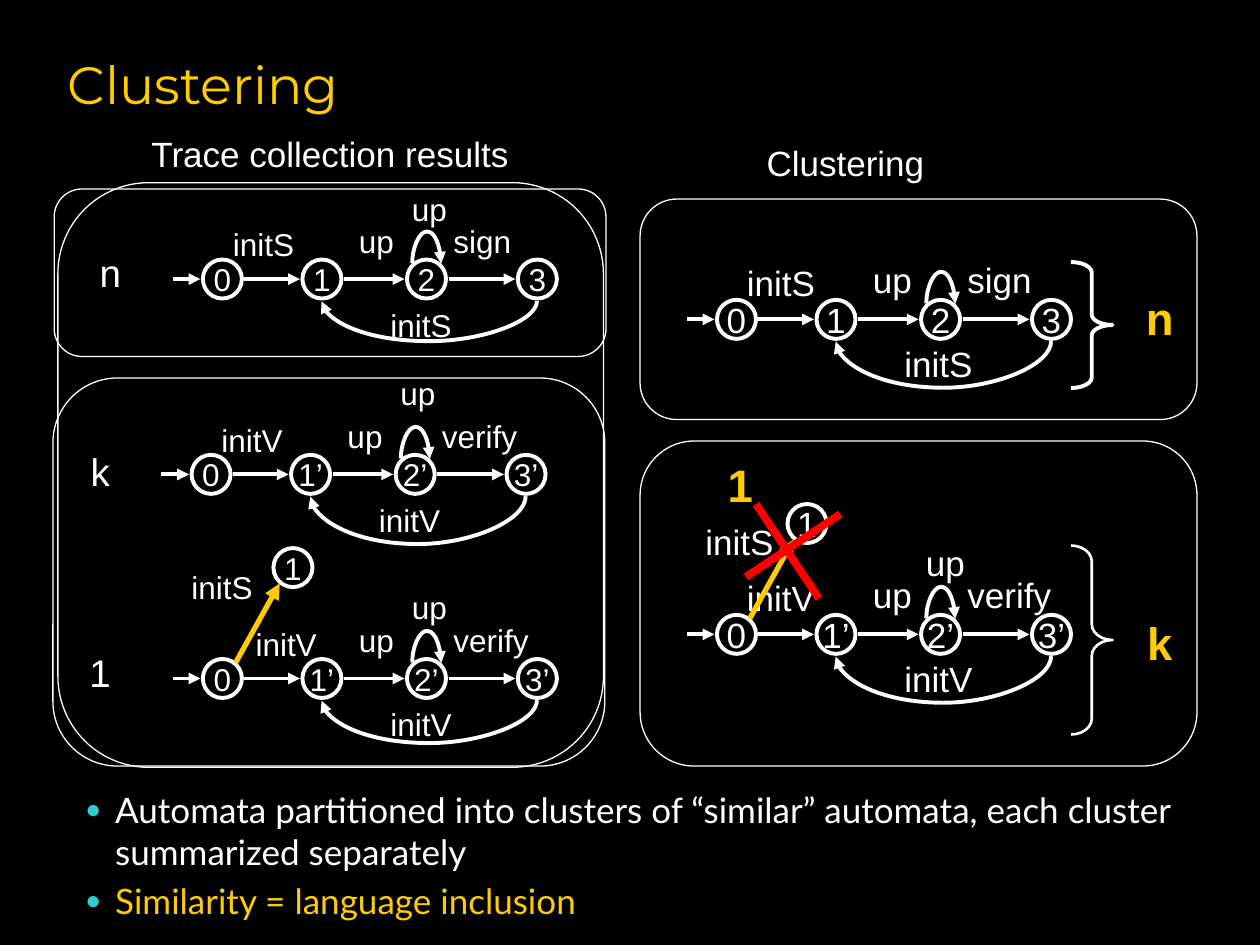
from lxml import etree
from pptx import Presentation
from pptx import util as u
from pptx.dml.color import RGBColor
from pptx.enum import shapes, text
from pptx.oxml.ns import qn

WHITE, GOLD, RED, TEAL = "FFFFFF", "FFCC00", "FF0000", "33CCCC"
GRID = 2.54      # one layout unit, in centimetres
THIN = 0.01      # width of a curve's own box, in centimetres
NODE = 0.31      # diameter of a state
STEPS = (0, 0.79, 1.62, 2.5)    # left edges of the four states
WIDE = {"up": 0.52, "sign": 0.73, "verify": 0.9, "initS": 0.76, "initV": 0.76}


def pos(*vals):
    return [u.Cm(v * GRID) for v in vals]


def hue(code):
    return RGBColor.from_string(code)


def sub(node, tag, **attrs):
    return etree.SubElement(node, qn(tag), **attrs)


def style(par, size, tint=WHITE, face="Arial", bold=False):
    font = par.font
    font.size, font.name, font.bold = u.Pt(size), face, bold
    font.color.rgb = hue(tint)


def label(slide, words, box, size, tint=WHITE, face="Arial", bold=False,
          wrap=True, align=text.PP_ALIGN.CENTER):
    frame = slide.shapes.add_textbox(*pos(*box)).text_frame
    frame.word_wrap = wrap
    frame.auto_size = text.MSO_AUTO_SIZE.SHAPE_TO_FIT_TEXT
    par = frame.paragraphs[0]
    par.text, par.alignment = words, align
    style(par, size, tint, face, bold)
    return frame


def tag(slide, words, x, y, size):
    """Transition label, its box scaled with the type size."""
    scale = size / 20
    box = (x, y, 0.2 + (WIDE[words] - 0.2) * scale, 0.1 + 0.33 * scale)
    label(slide, words, box, size, wrap=False, align=text.PP_ALIGN.LEFT)


def outline(slide, kind, box, width):
    shape = slide.shapes.add_shape(kind, *pos(*box))
    shape.shadow.inherit = False
    shape.fill.background()
    shape.line.color.rgb = hue(WHITE)
    shape.line.width = u.Pt(width)
    return shape


def state(slide, name, x, y, size):
    shape = outline(slide, shapes.MSO_SHAPE.OVAL, (x, y, NODE, NODE), 2.25)
    frame = shape.text_frame
    frame.word_wrap = False
    frame.vertical_anchor = text.MSO_ANCHOR.MIDDLE
    par = frame.paragraphs[0]
    par.text, par.alignment = name, text.PP_ALIGN.CENTER
    style(par, size)


def link(slide, ends, tint=WHITE, width=2.25, head=True,
         kind=shapes.MSO_CONNECTOR.STRAIGHT):
    line = slide.shapes.add_connector(kind, *ends)
    line.line.color.rgb = hue(tint)
    line.line.width = u.Pt(width)
    if head:
        sub(line.line._get_or_add_ln(), "a:tailEnd", type="triangle")
    sub(line._element.spPr, "a:effectLst")
    return line


def curve(slide, start, end, y, depth):
    """U-shaped arrow at height y; a negative depth bends it upwards."""
    mid, half = (start + end) / 2, (start - end) / 2
    x1, y1, y2 = pos(mid, y - half, y + half)
    line = link(slide, (x1, y1, x1 + u.Cm(THIN), y2),
                kind=shapes.MSO_CONNECTOR.CURVE)
    props = line._element.spPr
    props.find(qn("a:xfrm")).set("rot", "5400000")
    bend = round(depth * GRID / THIN * 100000)
    guides = props.find(qn("a:prstGeom")).find(qn("a:avLst"))
    sub(guides, "a:gd", name="adj1", fmla=f"val {bend}")


def machine(slide, x, y, size, init, last, depth, top=None, shift=0.14):
    """Automaton whose state 0 has its top left corner at x, y."""
    prime = "’" if init == "initV" else ""
    drop = 0.03 if size < 20 else 0
    mid = y + NODE / 2
    # States and the arrows between them
    for i, step in enumerate(STEPS):
        state(slide, f"{i}{prime}" if i else "0", x + step, y, size)
        tail = STEPS[i - 1] + NODE + 0.02 if i else -0.24
        link(slide, pos(x + tail, mid, x + step - 0.02, mid))
    # Self loop and way back
    curve(slide, x + 1.66, x + 1.89, y + 0.03, -0.25)
    curve(slide, x + 2.65, x + 0.94, y + 0.33, depth)
    # Transition labels
    tag(slide, init, x + shift, y - 0.35 + drop, size)
    tag(slide, "up", x + 1.14, y - 0.38 + drop, size)
    tag(slide, last, x + 1.89, y - 0.38 + drop, size)
    tag(slide, init, x + 1.39, y + 0.29 + drop, size)
    if top:
        tag(slide, "up", x + 1.56, y - top, size)


def branch(slide, x, y, size):
    """Extra state 1, reached from state 0 at x, y."""
    state(slide, "1", x + 0.56, y - 0.88, size)
    link(slide, pos(x + 0.26, y + 0.03, x + 0.61, y - 0.6), GOLD, 3)
    tag(slide, "initS", x - 0.19, y - (0.8 if size == 20 else 0.77), size)


def points(slide):
    frame = label(slide, "Automata partitioned into clusters of “similar” "
                  "automata, each cluster summarized separately",
                  (0.58, 6.21, 9.17, 1.17), 20, face="Lato",
                  align=text.PP_ALIGN.LEFT)
    par = frame.add_paragraph()
    par.text = "Similarity = language inclusion"
    style(par, 20, GOLD, "Lato")
    for par in frame.paragraphs:
        par.space_before = u.Pt(4)
        props = par._p.get_or_add_pPr()
        inset = u.Cm(0.6)
        props.set("marL", str(inset))
        props.set("indent", str(-inset))
        sub(sub(props, "a:buClr"), "a:srgbClr", val=TEAL)
        sub(props, "a:buSzPct", val="75000")
        sub(props, "a:buFont", typeface="Arial")
        sub(props, "a:buChar", char="●")


def main():
    deck = Presentation()
    deck.slide_width, deck.slide_height = pos(10, 7.5)
    slide = deck.slides.add_slide(deck.slide_layouts[6])
    slide.background.fill.solid()
    slide.background.fill.fore_color.rgb = hue("000000")

    # Title and column headings
    title = label(slide, "Clustering", (0.44, 0.25, 8.5, 0.83), 30, GOLD,
                  "Montserrat", align=text.PP_ALIGN.LEFT)
    title.auto_size = text.MSO_AUTO_SIZE.NONE
    title.vertical_anchor = text.MSO_ANCHOR.MIDDLE
    label(slide, "Trace collection results", (0.33, 1, 4.58, 0.43), 20)
    label(slide, "Clustering", (5, 1.07, 3.42, 0.43), 20)

    # Clusters on the right
    machine(slide, 5.69, 2.38, 20, "initS", "sign", 0.37)
    machine(slide, 5.69, 4.88, 20, "initV", "verify", 0.37, 0.63)
    branch(slide, 5.69, 4.88, 20)
    for y, high, bend, width in ((2.08, 1, 0.25, 2.25),
                                 (4.33, 1.5, 0.38, 1.5)):
        brace = outline(slide, shapes.MSO_SHAPE.RIGHT_BRACE,
                        (8.5, y, 0.33, high), width)
        brace.adjustments[0] = bend
    for name, x, y in (("n", 8.83, 2.25), ("k", 8.83, 4.83), ("1", 5.5, 3.58)):
        label(slide, name, (x, y, 0.75, 0.53), 26, GOLD, bold=True)

    # Red cross over the dropped branch
    for ends in ((6, 4, 6.5, 4.75), (5.92, 4.58, 6.67, 4.08)):
        link(slide, pos(*ends), RED, 4.5, head=False)

    # Traces on the left
    machine(slide, 1.61, 2.06, 18, "initS", "sign", 0.32, 0.6)
    machine(slide, 1.52, 3.61, 18, "initV", "verify", 0.38, 0.69)
    machine(slide, 1.61, 5.23, 18, "initV", "verify", 0.34, 0.61, 0.32)
    branch(slide, 1.61, 5.23, 18)
    for name, x, y in (("n", 0.5, 1.93), ("k", 0.42, 3.51), ("1", 0.42, 5.1)):
        label(slide, name, (x, y, 0.75, 0.47), 22)

    # Frames round the groups
    for box in ((5.08, 1.58, 4.42, 1.75), (5.08, 3.5, 4.42, 2.58),
                (0.43, 1.5, 4.38, 1.33), (0.42, 3, 4.38, 3.08),
                (0.46, 1.45, 4.33, 4.64)):
        outline(slide, shapes.MSO_SHAPE.ROUNDED_RECTANGLE, box, 0.75)

    points(slide)
    deck.save("out.pptx")


if __name__ == "__main__":
    main()
